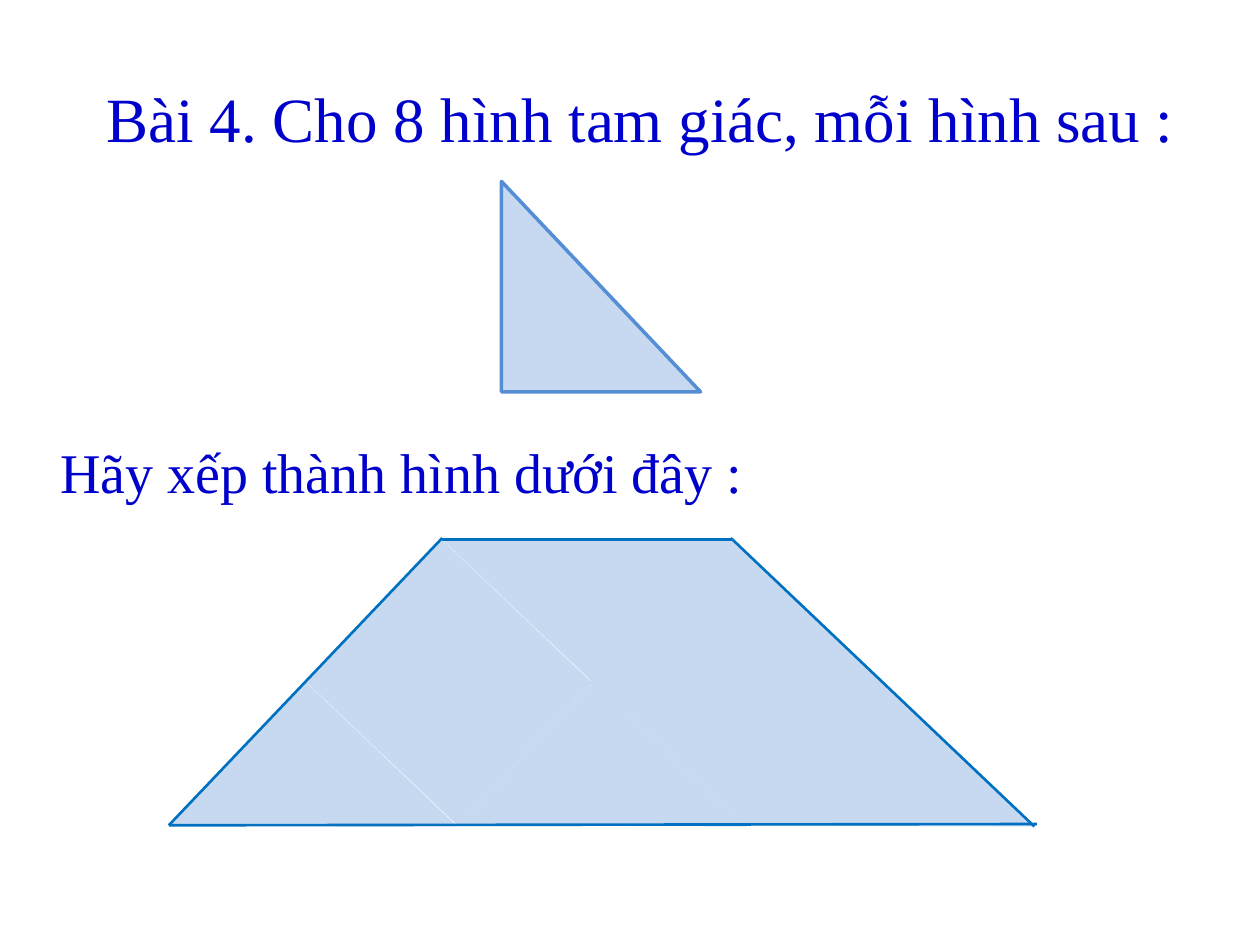
from pptx import Presentation
from pptx.dml.color import RGBColor
from pptx.enum.shapes import MSO_CONNECTOR, MSO_SHAPE
from pptx.enum.text import MSO_AUTO_SIZE
from pptx.oxml.ns import qn
from pptx.util import Inches, Pt

FILL, EDGE, SIDE, INK = "C6D9F1", "558ED5", "0070C0", "0000CC"
SIZE = (1.58, 1.67)

TEXTS = [
    ("Bài 4. Cho 8 hình tam giác, mỗi hình sau :", (0.75, 0.58, 8.92, 0.71), 36),
    ("Hãy xếp thành hình dưới đây :", (0.38, 3.42, 6, 0.64), 32),
]
SAMPLE = (3.98, 1.44)
# Turn in degrees, then the left and top of each piece turned that way
PIECES = {
    313.5: [(2.78, 4.57), (3.87, 3.45), (5.07, 4.57)],
    133.6: [(2.77, 4.59), (5.07, 4.59), (1.69, 5.72), (3.99, 5.72), (6.27, 5.72)],
}
SIDES = [
    ((3.51, 4.28), (5.81, 4.28)),
    ((1.34, 6.55), (3.51, 4.27)),
    ((1.34, 6.55), (8.23, 6.54)),
    ((5.8, 4.27), (8.21, 6.56)),
]


def color(code):
    return RGBColor.from_string(code)


def inches(*nums):
    return [Inches(n) for n in nums]


def add_text(slide, text, box, size, font="Times New Roman", ink=INK):
    frame = slide.shapes.add_textbox(*inches(*box)).text_frame
    frame.word_wrap = True
    frame.auto_size = MSO_AUTO_SIZE.SHAPE_TO_FIT_TEXT
    run = frame.paragraphs[0].add_run()
    run.text = text
    run.font.name, run.font.size = font, Pt(size)
    run.font.color.rgb = color(ink)


def add_piece(slide, spot, turn=0, edge=None):
    piece = slide.shapes.add_shape(MSO_SHAPE.RIGHT_TRIANGLE, *inches(*spot, *SIZE))
    piece.shadow.inherit = False
    piece.rotation = turn
    piece.fill.solid()
    piece.fill.fore_color.rgb = color(FILL)
    if edge:
        piece.line.color.rgb = color(edge)
        piece.line.width = Pt(2)
    else:
        piece.line.fill.background()


def add_side(slide, start, end):
    side = slide.shapes.add_connector(MSO_CONNECTOR.STRAIGHT, *inches(*start, *end))
    side.line.color.rgb = color(SIDE)
    side.line.width = Pt(1.5)
    props = side._element.spPr
    props.append(props.makeelement(qn("a:effectLst"), {}))


def main():
    deck = Presentation()
    deck.slide_width, deck.slide_height = inches(10, 7.5)
    slide = deck.slides.add_slide(deck.slide_layouts[6])
    for text, box, size in TEXTS:
        add_text(slide, text, box, size)
    add_piece(slide, SAMPLE, edge=EDGE)
    for turn, spots in PIECES.items():
        for spot in spots:
            add_piece(slide, spot, turn)
    for start, end in SIDES:
        add_side(slide, start, end)
    deck.save("out.pptx")


if __name__ == "__main__":
    main()
